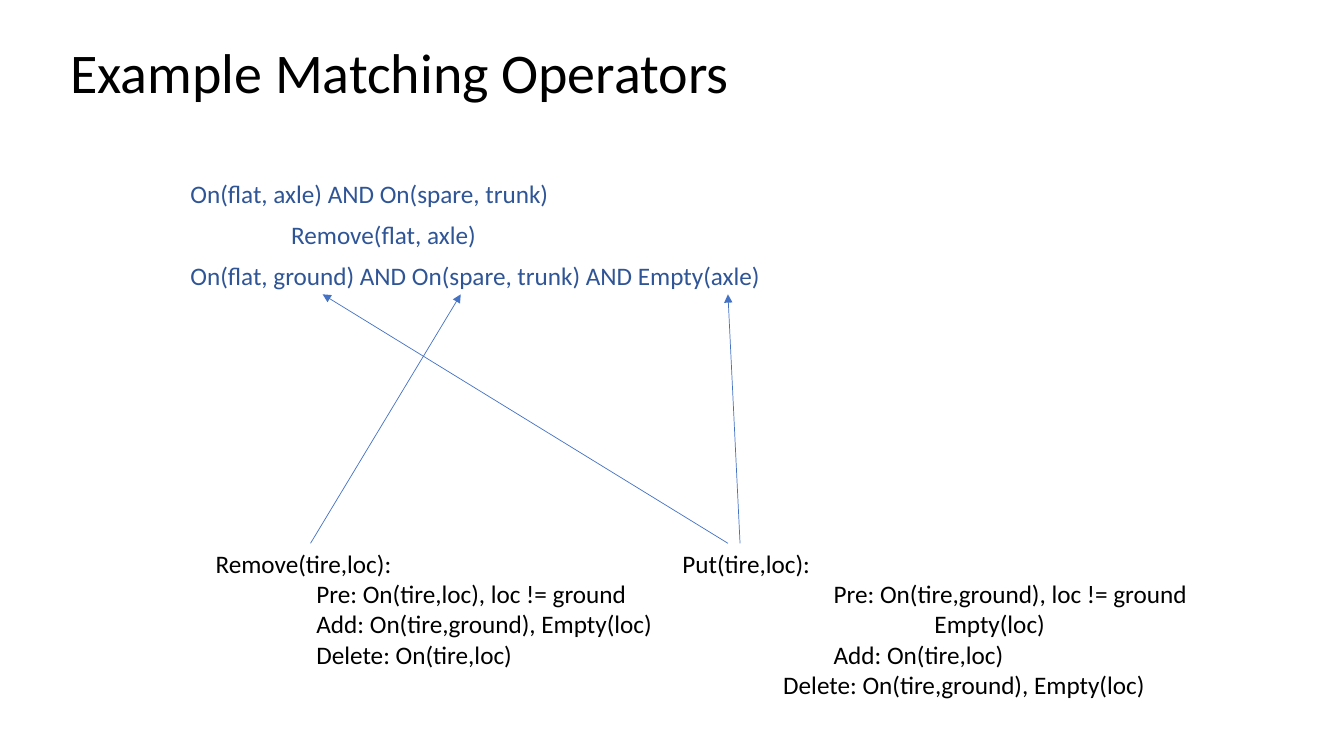
from pptx import Presentation
from pptx.dml.color import RGBColor
from pptx.enum.shapes import MSO_CONNECTOR
from pptx.enum.text import MSO_ANCHOR, MSO_AUTO_SIZE
from pptx.oxml.ns import qn
from pptx.util import Inches, Pt
from lxml import etree

STRAIGHT = MSO_CONNECTOR.STRAIGHT
MIDDLE, TOP = MSO_ANCHOR.MIDDLE, MSO_ANCHOR.TOP
GROW, FIXED = MSO_AUTO_SIZE.SHAPE_TO_FIT_TEXT, MSO_AUTO_SIZE.NONE
FONT = "Calibri"
BLACK, PLAN_BLUE, ARROW_BLUE = "000000", "2F5597", "4472C4"

# Each line of text is (indent in inches, wording).
TITLE = [(0, "Example Matching Operators")]
PLAN = [
    (0, "On(flat, axle) AND On(spare, trunk)"),
    (1, "Remove(flat, axle)"),
    (0, "On(flat, ground) AND On(spare, trunk) AND Empty(axle)"),
]
REMOVE_OPERATOR = [
    (0, "Remove(tire,loc):"),
    (1, "Pre: On(tire,loc), loc != ground"),
    (1, "Add: On(tire,ground), Empty(loc)"),
    (1, "Delete: On(tire,loc)"),
]
PUT_OPERATOR = [
    (0, "Put(tire,loc):"),
    (1.5, "Pre: On(tire,ground), loc != ground"),
    (2.5, "Empty(loc)"),
    (1.5, "Add: On(tire,loc)"),
    (1, "Delete: On(tire,ground), Empty(loc)"),
]

# Arrows rise from an operator to the condition it matches: (start x, end x).
OPERATOR_TOP, CONDITION_BOTTOM = 5.39, 2.92
MATCHES = [(3.08, 4.57), (7.22, 3.2), (7.34, 7.22)]


def color(hex_string):
    return RGBColor.from_string(hex_string)


def add_text(page, place, lines, size=18, ink=BLACK, line_spacing=1.0,
             space_before=0, anchor=TOP, fit=FIXED):
    box = page.shapes.add_textbox(*(Inches(length) for length in place))
    frame = box.text_frame
    frame.word_wrap = True
    frame.auto_size = fit
    frame.vertical_anchor = anchor
    frame.text = "\n".join(wording for _, wording in lines)
    for para, (indent, _) in zip(frame.paragraphs, lines):
        para.line_spacing = line_spacing
        para.space_before = Pt(space_before)
        para.font.name = FONT
        if indent:
            para._p.get_or_add_pPr().set("marL", str(Inches(indent)))
        for span in para.runs:
            span.font.name = FONT
            span.font.size = Pt(size)
            span.font.color.rgb = color(ink)


def add_arrow(page, start_x, end_x):
    arrow = page.shapes.add_connector(
        STRAIGHT, Inches(start_x), Inches(OPERATOR_TOP),
        Inches(end_x), Inches(CONDITION_BOTTOM))
    arrow.line.color.rgb = color(ARROW_BLUE)
    arrow.line.width = Pt(0.5)
    etree.SubElement(arrow.line._get_or_add_ln(), qn("a:tailEnd"), type="triangle")
    etree.SubElement(arrow._element.spPr, qn("a:effectLst"))


def main():
    deck = Presentation()
    deck.slide_width, deck.slide_height = Inches(13.33), Inches(7.5)
    page = deck.slides.add_slide(deck.slide_layouts[6])

    add_text(page, (1.79, 1.75, 9.5, 4.95), PLAN, ink=PLAN_BLUE,
             line_spacing=0.9, space_before=10)
    add_text(page, (0.6, 0.4, 11.5, 0.69), TITLE, size=40,
             line_spacing=0.9, anchor=MIDDLE)
    add_text(page, (2.04, OPERATOR_TOP, 6.67, 1.31), REMOVE_OPERATOR, fit=GROW)
    add_text(page, (6.67, OPERATOR_TOP, 6.67, 1.62), PUT_OPERATOR, fit=GROW)
    for start_x, end_x in MATCHES:
        add_arrow(page, start_x, end_x)

    deck.save("out.pptx")


if __name__ == "__main__":
    main()
